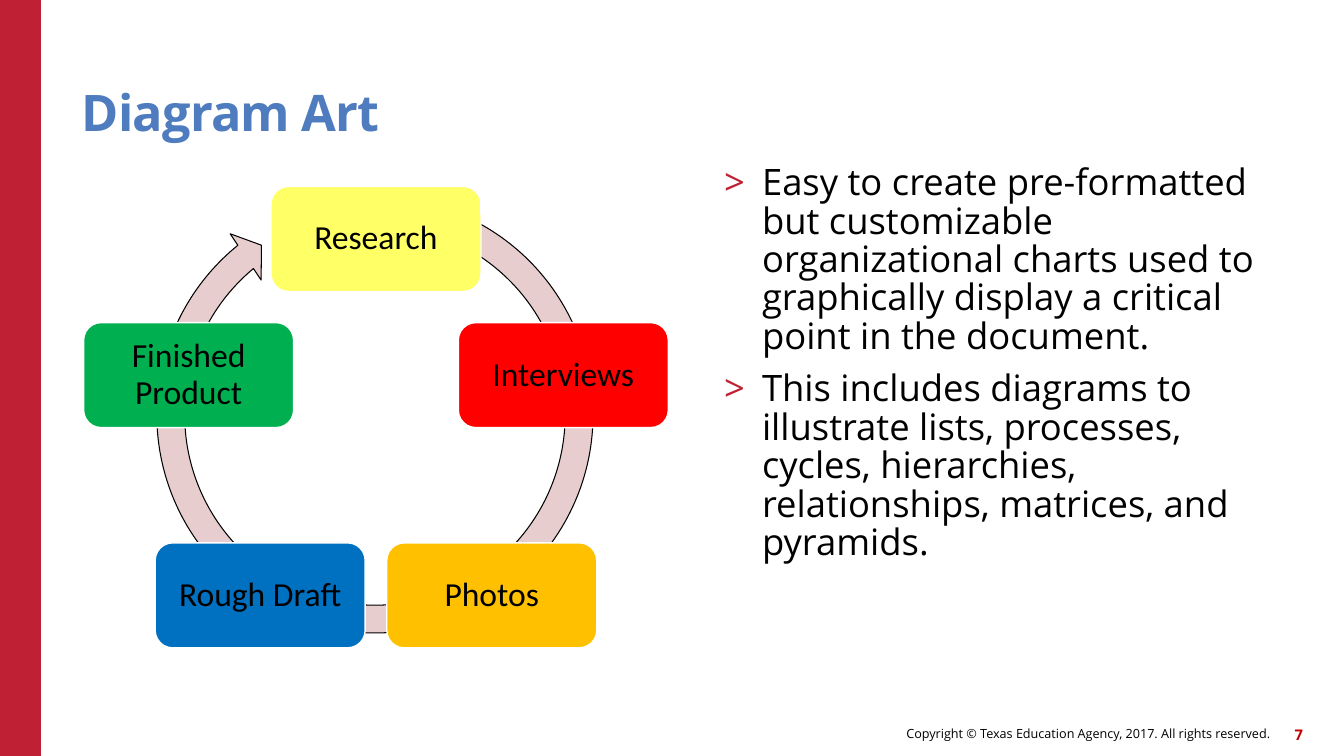
import math

import pptx
import pptx.dml.color
import pptx.enum.shapes
import pptx.enum.text
import pptx.oxml.ns
import pptx.util
from lxml import etree

# Content
TITLE = "Diagram Art"
STAGES = [  # clockwise from the top
    ("Research", "yellow"),
    ("Interviews", "red"),
    ("Photos", "amber"),
    ("Rough Draft", "blue"),
    ("Finished Product", "green"),
]
POINTS = [
    "Easy to create pre-formatted but customizable organizational charts "
    "used to graphically display a critical point in the document.",
    "This includes diagrams to illustrate lists, processes, cycles, "
    "hierarchies, relationships, matrices, and pyramids.",
]
COPYRIGHT = "Copyright © Texas Education Agency, 2017. All rights reserved."
PAGE = "7"

COLORS = {
    "crimson": "C02033", "title": "4E7CBE", "page": "C00000",
    "black": "000000", "white": "FFFFFF", "ring": "E8CDCE",
    "yellow": "FFFF66", "red": "FF0000", "amber": "FFC000",
    "blue": "0070C0", "green": "00B050",
}

# Layout in px
SLIDE_W, SLIDE_H = 1344, 756
CYCLE_X, CYCLE_Y, CYCLE_RADIUS = 376, 436, 197
STAGE_W, STAGE_H = 210, 105
RING_BOX = (143, 183, 464, 464)
RING_ADJUSTMENTS = (0.06, 3.31, 138.43, 173.45, 0.06)
HANGING = 38

SHAPE = pptx.enum.shapes.MSO_SHAPE
ANCHOR = pptx.enum.text.MSO_ANCHOR
ALIGN = pptx.enum.text.PP_ALIGN


def px(length):
    return pptx.util.Emu(round(length * 914400 / 100.8))


def rgb(name):
    return pptx.dml.color.RGBColor.from_string(COLORS[name])


def style(paragraph, size, color="black", face="Open Sans", bold=False):
    font = paragraph.font
    font.size, font.name, font.bold = pptx.util.Pt(size), face, bold
    font.color.rgb = rgb(color)


def set_frame(frame, anchor, insets=(0, 0, 0, 0)):
    frame.word_wrap = True
    frame.vertical_anchor = anchor
    (frame.margin_left, frame.margin_top,
     frame.margin_right, frame.margin_bottom) = map(px, insets)


def add_shape(slide, kind, box, fill, line=None, width=1):
    shape = slide.shapes.add_shape(kind, *map(px, box))
    shape.shadow.inherit = False
    shape.fill.solid()
    shape.fill.fore_color.rgb = rgb(fill)
    if line:
        shape.line.color.rgb = rgb(line)
        shape.line.width = pptx.util.Pt(width)
    else:
        shape.line.fill.background()
    return shape


def add_line_of_text(slide, box, text, anchor, align, **look):
    frame = slide.shapes.add_textbox(*map(px, box)).text_frame
    set_frame(frame, anchor)
    paragraph = frame.paragraphs[0]
    paragraph.text = text
    paragraph.alignment = align
    style(paragraph, **look)
    return paragraph


def add_bullet(paragraph):
    properties = paragraph._p.get_or_add_pPr()
    properties.set("marL", str(px(HANGING)))
    properties.set("indent", str(-px(HANGING)))
    qn = pptx.oxml.ns.qn
    color = etree.SubElement(properties, qn("a:buClr"))
    etree.SubElement(color, qn("a:srgbClr"), val=COLORS["crimson"])
    etree.SubElement(properties, qn("a:buFont"), typeface="Open Sans")
    etree.SubElement(properties, qn("a:buChar"), char=">")


def add_cycle(slide):
    ring = add_shape(slide, SHAPE.CIRCULAR_ARROW, RING_BOX, "ring", "black", 0.75)
    for index, value in enumerate(RING_ADJUSTMENTS):
        ring.adjustments[index] = value

    for index, (label, fill) in enumerate(STAGES):
        angle = 2 * math.pi * index / len(STAGES)
        left = CYCLE_X + CYCLE_RADIUS * math.sin(angle) - STAGE_W / 2
        top = CYCLE_Y - CYCLE_RADIUS * math.cos(angle) - STAGE_H / 2
        stage = add_shape(slide, SHAPE.ROUNDED_RECTANGLE,
                          (left, top, STAGE_W, STAGE_H), fill, "white")
        set_frame(stage.text_frame, ANCHOR.MIDDLE, (10, 10, 10, 10))
        paragraph = stage.text_frame.paragraphs[0]
        paragraph.text = label
        paragraph.alignment = ALIGN.CENTER
        paragraph.line_spacing = 0.9
        style(paragraph, 24, face="Calibri")


def add_points(slide):
    frame = slide.shapes.add_textbox(*map(px, (714, 156, 587, 522))).text_frame
    set_frame(frame, ANCHOR.TOP, (10, 9, 10, 5))
    for index, text in enumerate(POINTS):
        paragraph = frame.add_paragraph() if index else frame.paragraphs[0]
        paragraph.text = text
        add_bullet(paragraph)
        paragraph.line_spacing = 0.88
        if index:
            paragraph.space_before = pptx.util.Pt(10)
        style(paragraph, 26)


def main():
    deck = pptx.Presentation()
    deck.slide_width, deck.slide_height = px(SLIDE_W), px(SLIDE_H)
    slide = deck.slides.add_slide(deck.slide_layouts[6])

    # Side band and footer
    add_shape(slide, SHAPE.RECTANGLE, (0, 0, 41, SLIDE_H), "crimson")
    add_line_of_text(slide, (619, 718, 651, 32), COPYRIGHT,
                     ANCHOR.MIDDLE, ALIGN.RIGHT, size=9)
    add_line_of_text(slide, (1261, 719, 42, 32), PAGE, ANCHOR.MIDDLE,
                     ALIGN.RIGHT, size=10.5, color="page", bold=True)

    # Title
    title = add_line_of_text(slide, (82, 45, 1109, 97), TITLE, ANCHOR.BOTTOM,
                             ALIGN.LEFT, size=36, color="title", bold=True)
    title.line_spacing = 0.9
    title.runs[0]._r.get_or_add_rPr().set("spc", "-60")

    # Diagram and explanation
    add_cycle(slide)
    add_points(slide)

    deck.save("out.pptx")


if __name__ == "__main__":
    main()
